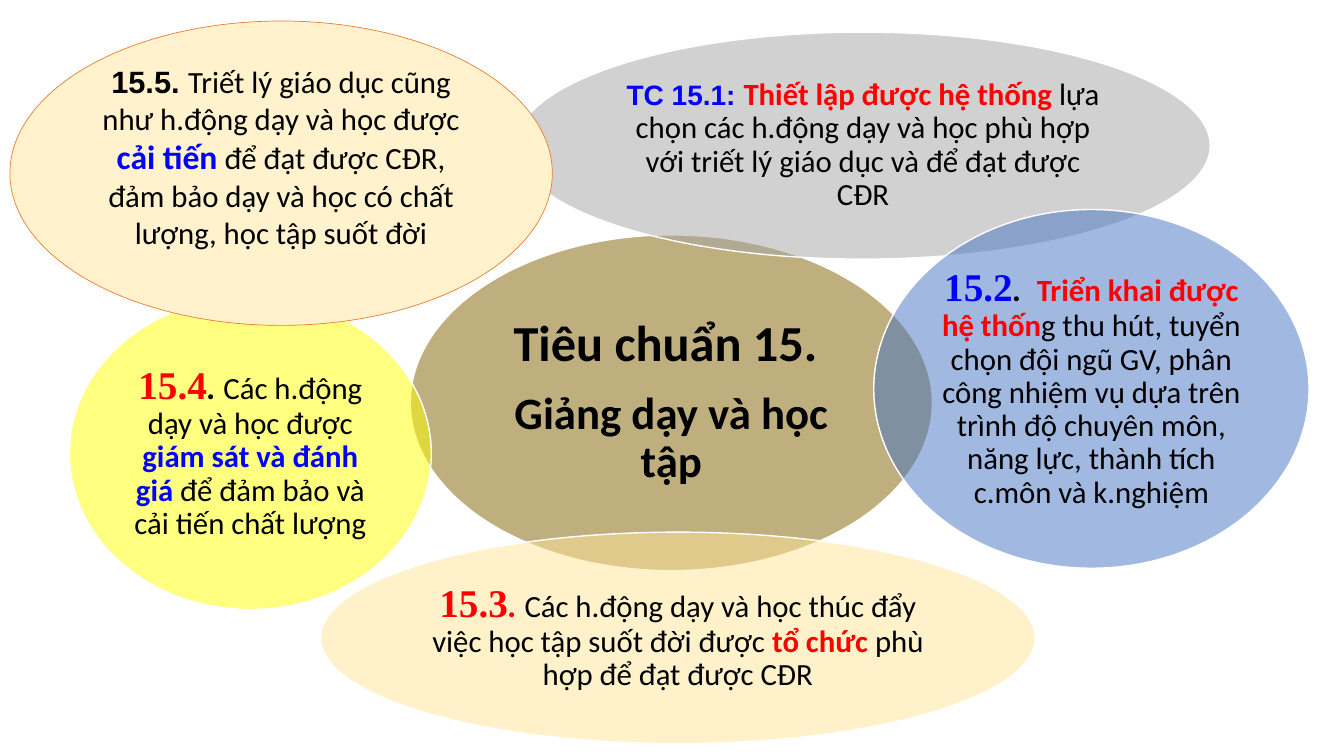
from pptx import Presentation
from pptx.dml.color import RGBColor
from pptx.enum.shapes import MSO_SHAPE as SHAPE
from pptx.enum.text import MSO_ANCHOR as ANCHOR, PP_ALIGN as ALIGN
from pptx.oxml.ns import qn
from pptx.util import Cm, Pt
from lxml import etree

BLACK, RED, BLUE = "000000", "FF0000", "0000FF"
SANS, SERIF, ARIAL = "Calibri", "Times New Roman", "Arial"


def rgb(value):
    return RGBColor.from_string(value)


def add_run(p, text, color=BLACK, size=22, font=SANS, bold=False, italic=False):
    r = p.add_run()
    r.text = text
    f = r.font
    f.name, f.size, f.bold, f.italic = font, Pt(size), bold, italic
    f.color.rgb = rgb(color)


def set_alpha(s, percent):
    color = s.fill._xPr.find(qn("a:solidFill"))[0]
    etree.SubElement(color, qn("a:alpha")).set("val", str(percent * 1000))


def add_oval(slide, box, fill, line="FFFFFF", width=1, alpha=50, inset=0.1):
    """Draw an ellipse in box (left, top, width, height in cm)."""
    s = slide.shapes.add_shape(SHAPE.OVAL, *[Cm(v) for v in box])
    s.shadow.inherit = False
    s.fill.solid()
    s.fill.fore_color.rgb = rgb(fill)
    if alpha < 100:
        set_alpha(s, alpha)
    s.line.color.rgb = rgb(line)
    s.line.width = Pt(width)
    tf = s.text_frame
    tf.word_wrap = True
    tf.vertical_anchor = ANCHOR.MIDDLE
    tf.margin_left = tf.margin_right = Cm(inset)
    tf.margin_top = tf.margin_bottom = Cm(inset)
    return tf


def fill_text(tf, paragraphs, spacing=0.9, after=12.6):
    for i, runs in enumerate(paragraphs):
        p = tf.add_paragraph() if i else tf.paragraphs[0]
        p.alignment = ALIGN.CENTER
        p.line_spacing = spacing
        p.space_after = Pt(after)
        for text, style in runs:
            add_run(p, text, **style)


def add_center(slide, box):
    tf = add_oval(slide, box, "806000", inset=0.12)
    fill_text(tf, [
        [("Tiêu chuẩn 15. ", dict(size=36, bold=True))],
        [("Giảng dạy và học tập", dict(size=32, bold=True))],
    ])


def add_criterion(slide, box, fill, runs):
    fill_text(add_oval(slide, box, fill), [runs])


def add_improvement(slide, box, runs):
    tf = add_oval(slide, box, "FFF2CC", "ED7D31", 0.5, alpha=100, inset=0.13)
    tf.margin_left = tf.margin_right = Cm(0.25)
    tf.margin_bottom = Cm(0.98)  # lifts the text above the middle
    fill_text(tf, [runs], spacing=1, after=0)


def numbered(number, color, dot, dot_color):
    """Large serif number followed by its dot."""
    return [(number, dict(color=color, size=28, font=SERIF, bold=True)),
            (dot, dict(color=dot_color, size=24, bold=True, italic=True))]


PLAIN = dict()
RED_BOLD = dict(color=RED, bold=True)
BLUE_BOLD = dict(color=BLUE, bold=True)

# Criteria 15.1 to 15.4, clockwise from the top: box, fill, runs
CRITERIA = [
    ((13, 0.81, 17.5, 5.72), "A5A5A5", [
        ("TC 15.1: ", dict(color=BLUE, size=20, font=ARIAL, bold=True)),
        ("Thiết lập được hệ thống ", RED_BOLD),
        ("lựa chọn các h.động dạy và học phù hợp với triết lý giáo dục "
         "và để đạt được CĐR", PLAIN)]),
    ((22.02, 5.28, 10.97, 9.04), "4472C4", numbered("15.2", BLUE, ".  ", BLACK) + [
        ("Triển khai được hệ thốn", RED_BOLD),
        ("g thu hút, tuyển chọn đội ngũ GV, phân công nhiệm vụ dựa trên "
         "trình độ chuyên môn, năng lực, thành tích c.môn và k.nghiệm", PLAIN)]),
    ((8.08, 13.41, 18.01, 5.33), "FFE699", numbered("15.3", RED, ". ", RED) + [
        ("Các h.động dạy và học thúc đẩy việc học tập suốt đời được ", PLAIN),
        ("tổ chức ", RED_BOLD),
        ("phù hợp để đạt được CĐR", PLAIN)]),
    ((1.75, 7.49, 9.12, 7.87), "FFFF00", numbered("15.4", RED, ". ", BLACK) + [
        ("Các h.động dạy và học được ", PLAIN),
        ("giám sát và đánh giá ", BLUE_BOLD),
        ("để đảm bảo và cải tiến chất lượng", PLAIN)]),
]

IMPROVEMENT = [
    ("15.5. ", dict(font=ARIAL, bold=True)),
    ("Triết lý giáo dục cũng như h.động dạy và học được ", PLAIN),
    ("cải tiến", dict(color=BLUE, size=24, bold=True)),
    (" để đạt được CĐR, đảm bảo dạy và học có chất lượng, học tập suốt đời", PLAIN),
]


def main():
    prs = Presentation()
    prs.slide_width, prs.slide_height = Cm(33.87), Cm(19.05)
    slide = prs.slides.add_slide(prs.slide_layouts[6])

    # Central standard, with its criteria overlapping it
    add_center(slide, (10.34, 5.92, 13.16, 8.46))
    for box, fill, runs in CRITERIA:
        add_criterion(slide, box, fill, runs)

    # Opaque criterion 15.5 on top
    add_improvement(slide, (0.25, 0.53, 13.67, 7.67), IMPROVEMENT)
    prs.save("out.pptx")


if __name__ == "__main__":
    main()
